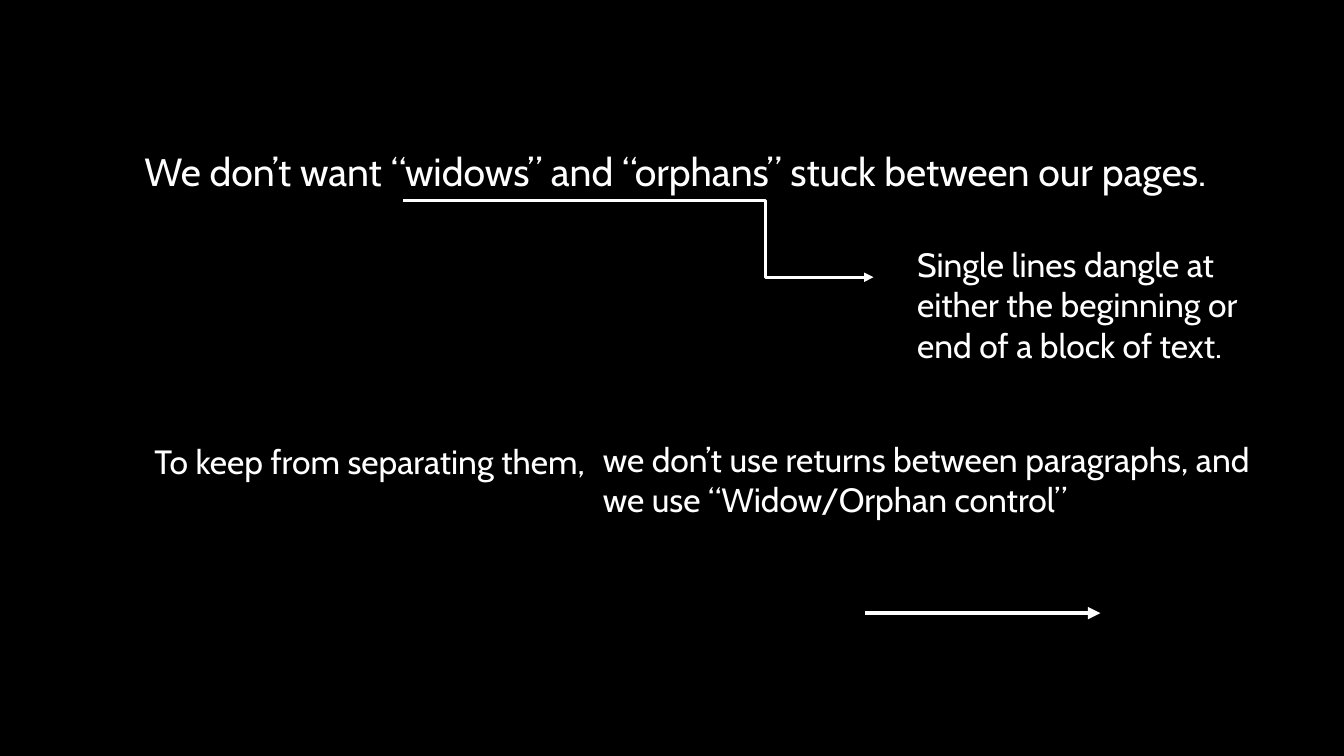
import pptx
import pptx.dml.color
import pptx.enum.shapes
import pptx.enum.text
import pptx.oxml
import pptx.oxml.ns
import pptx.util
import lxml.etree

BLACK = pptx.dml.color.RGBColor(0, 0, 0)
WHITE = pptx.dml.color.RGBColor(255, 255, 255)
CELL = pptx.util.Inches(1) / 12
COLUMNS, ROWS = 160, 90
ELBOW = pptx.enum.shapes.MSO_CONNECTOR.ELBOW
STRAIGHT = pptx.enum.shapes.MSO_CONNECTOR.STRAIGHT


def cells(*counts):
    return [round(count * CELL) for count in counts]


def add_statement(slide, left, top, width, height, lines, size=24, wrap=True):
    frame = slide.shapes.add_textbox(*cells(left, top, width, height)).text_frame
    frame_format = {
        "word_wrap": wrap,
        "auto_size": pptx.enum.text.MSO_AUTO_SIZE.SHAPE_TO_FIT_TEXT,
    }
    for name, value in frame_format.items():
        setattr(frame, name, value)
    frame.text = "\n".join(lines)
    font_format = {"name": "Cabin", "size": pptx.util.Pt(size)}
    for paragraph in frame.paragraphs:
        for run in paragraph.runs:
            for name, value in font_format.items():
                setattr(run.font, name, value)
            run.font.color.rgb = WHITE


def add_arrow(slide, kind, start, end, weight, bend=None):
    arrow = slide.shapes.add_connector(kind, *cells(*start, *end))
    arrow.line.color.rgb = WHITE
    arrow.line.width = pptx.util.Pt(weight)
    qn = pptx.oxml.ns.qn
    properties = arrow._element.spPr
    outline = properties.find(qn("a:ln"))
    lxml.etree.SubElement(outline, qn("a:tailEnd"), type="triangle")
    lxml.etree.SubElement(properties, qn("a:effectLst"))
    if bend is not None:
        guides = properties.find(qn("a:prstGeom")).find(qn("a:avLst"))
        lxml.etree.SubElement(
            guides, qn("a:gd"), name="adj1", fmla=f"val {round(bend * 100000)}"
        )


def add_problem(slide, left, top):
    add_statement(
        slide, left, top, 131, 6.86,
        ["We don’t want “widows” and “orphans” stuck between our pages."],
        size=28,
    )
    add_statement(
        slide, left + 92, top + 11.46, 44, 15.75,
        ["Single lines dangle at either the beginning or end of a block of text."],
    )
    add_arrow(
        slide, ELBOW, (left + 32, top + 6.86), (left + 88, top + 16), 2.25, bend=0.77
    )


def add_remedy(slide, left, top):
    add_statement(
        slide, left, top + 0.25, 54.5, 6.06,
        ["To keep from separating them,"], wrap=False,
    )
    add_statement(
        slide, left + 53.4, top, 79.4, 10.9,
        ["we don’t use returns between paragraphs, and", "we use “Widow/Orphan control”"],
        wrap=False,
    )
    add_arrow(slide, STRAIGHT, (left + 85.8, top + 21.4), (left + 113.8, top + 21.4), 3)


def main():
    deck = pptx.Presentation()
    deck.slide_width, deck.slide_height = cells(COLUMNS, ROWS)
    slide = deck.slides.add_slide(deck.slide_layouts[6])
    slide.background.fill.solid()
    slide.background.fill.fore_color.rgb = BLACK
    add_problem(slide, 16, 17)
    add_remedy(slide, 17.2, 51.6)
    deck.save("out.pptx")


if __name__ == "__main__":
    main()
